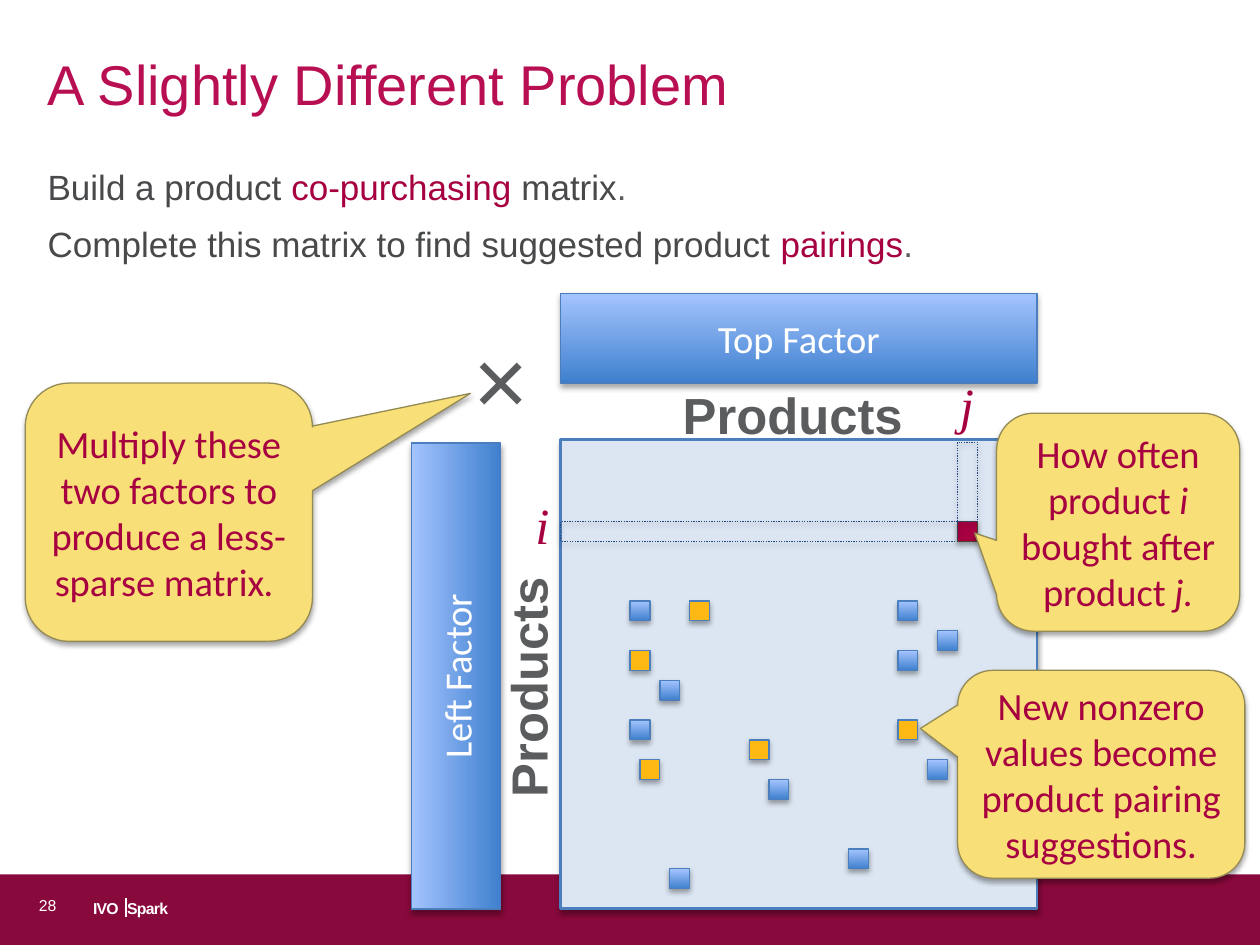
from lxml import etree
from pptx import Presentation
from pptx.dml.color import RGBColor
from pptx.enum.dml import MSO_LINE
from pptx.enum.shapes import MSO_CONNECTOR, MSO_SHAPE
from pptx.enum.text import MSO_ANCHOR, PP_ALIGN
from pptx.oxml import parse_xml
from pptx.oxml.ns import nsdecls, qn
from pptx.util import Inches, Pt

RECT = MSO_SHAPE.RECTANGLE
CALLOUT = MSO_SHAPE.ROUNDED_RECTANGULAR_CALLOUT
STRAIGHT = MSO_CONNECTOR.STRAIGHT
DOT = MSO_LINE.ROUND_DOT
MIDDLE = MSO_ANCHOR.MIDDLE
LEFT, CENTER = PP_ALIGN.LEFT, PP_ALIGN.CENTER

WIDTH, HEIGHT = 10, 7.5
MATRIX_X, MATRIX_Y, MATRIX_W, MATRIX_H = 4.45, 3.49, 3.78, 3.72
GRID_Y = 3.51
STEP = MATRIX_W / 48
CELL = 2 * STEP
FACTOR = 0.71

CRIMSON, GRAY, DARK, WHITE = "A70041", "5A5C5E", "48494B", "FFFFFF"
BLUE = ("3F80CE", "A4C4FF")
EDGE, AMBER, YELLOW = "4B7EBC", "FDB813", "F9DF77"
TARGET = (40, 8)
KNOWN = [(10, 24), (7, 16), (38, 19), (7, 28), (21, 34), (34, 16),
         (29, 41), (37, 32), (34, 21), (11, 43)]
FOUND = [(13, 16), (7, 21), (8, 32), (19, 30), (34, 28)]


def rgb(value):
    return RGBColor.from_string(value)


def box(*lengths):
    return [Inches(n) for n in lengths]


def style(font, size, color, name="Arial", bold=False, italic=False):
    font.size, font.name, font.bold, font.italic = Pt(size), name, bold, italic
    font.color.rgb = rgb(color)


def add_shadow(sp):
    sp.shadow.inherit = False
    effects = sp._element.spPr.find(qn("a:effectLst"))
    effects.append(parse_xml(
        f'<a:outerShdw {nsdecls("a")} blurRad="{Pt(3.1)}" dist="{Pt(1.8)}" '
        'dir="5400000" rotWithShape="0"><a:srgbClr val="000000">'
        '<a:alpha val="35000"/></a:srgbClr></a:outerShdw>'))


def add_block(s, at, fill, line=EDGE, width=0.75, kind=RECT):
    sp = s.shapes.add_shape(kind, *box(*at))
    add_shadow(sp)
    if fill is None:
        sp.fill.background()
    elif isinstance(fill, tuple):
        sp.fill.gradient()
        sp.fill.gradient_angle = 90
        for stop, color in zip(sp.fill.gradient_stops, fill):
            stop.color.rgb = rgb(color)
    else:
        sp.fill.solid()
        sp.fill.fore_color.rgb = rgb(fill)
    sp.line.color.rgb = rgb(line)
    sp.line.width = Pt(width)
    return sp


def add_cell(s, col, row, fill, line=EDGE):
    add_block(s, (MATRIX_X + col * STEP, GRID_Y + row * STEP, CELL, CELL), fill, line)


def add_guide(s, at):
    add_block(s, at, None, "1F497D").line.dash_style = DOT


def add_factor(s, at, text, rotation=0):
    sp = add_block(s, at, BLUE)
    sp.rotation = rotation
    tf = sp.text_frame
    tf.vertical_anchor = MIDDLE
    tf.text = text
    p = tf.paragraphs[0]
    p.alignment = CENTER
    style(p.font, 22, WHITE, "Calibri")


def add_callout(s, at, adjustments, runs):
    sp = add_block(s, at, YELLOW, "948A54", kind=CALLOUT)
    for i, value in enumerate(adjustments):
        sp.adjustments[i] = value
    tf = sp.text_frame
    tf.word_wrap = True
    tf.vertical_anchor = MIDDLE
    p = tf.paragraphs[0]
    p.alignment = CENTER
    style(p.font, 22, CRIMSON, "Calibri")
    for text, italic in runs:
        r = p.add_run()
        r.text = text
        r.font.italic = italic


def add_label(s, at, text, size, color, name="Arial", wrap=True, rotation=0, **look):
    sp = s.shapes.add_textbox(*box(*at))
    sp.rotation = rotation
    tf = sp.text_frame
    tf.word_wrap = wrap
    tf.text = text
    p = tf.paragraphs[0]
    style(p.font, size, color, name, **look)
    return p


def add_footer(s):
    band = s.shapes.add_shape(RECT, *box(0, 6.94, WIDTH, HEIGHT - 6.94))
    band.shadow.inherit = False
    band.fill.solid()
    band.fill.fore_color.rgb = rgb("88093C")
    band.line.fill.background()
    divider = s.shapes.add_connector(STRAIGHT, *box(1, 7.13, 1, 7.28))
    divider.line.color.rgb = rgb(WHITE)
    divider.line.width = Pt(1.25)
    etree.SubElement(divider._element.spPr, qn("a:effectLst"))
    p = add_label(s, (0.64, 7.08, 0.86, 0.25), "IVO\tSpark", 9, WHITE, bold=True)
    tabs = parse_xml(f'<a:tabLst {nsdecls("a")}><a:tab pos="{Inches(0.27)}" algn="l"/></a:tabLst>')
    p._p.get_or_add_pPr().insert(0, tabs)
    for r in p.runs:
        r._r.get_or_add_rPr().set("spc", "-40")
    add_label(s, (0.21, 7.06, 0.6, 0.27), "28", 9, WHITE)


def add_title(s, text):
    sp = s.shapes.title
    sp.left, sp.top, sp.width, sp.height = box(0.28, 0.32, 9.37, 0.68)
    tf = sp.text_frame
    tf.vertical_anchor = MIDDLE
    tf.text = text
    p = tf.paragraphs[0]
    p.alignment = LEFT
    style(p.font, 32, "B80F53")


def add_body(s, lines):
    tf = s.shapes.add_textbox(*box(0.28, 1.23, 9.37, 0.94)).text_frame
    tf.word_wrap = True
    for i, runs in enumerate(lines):
        p = tf.add_paragraph() if i else tf.paragraphs[0]
        p.line_spacing = 1.1
        if i:
            p.space_before = Pt(6)
        style(p.font, 20, DARK)
        for text, color in runs:
            r = p.add_run()
            r.text = text
            r.font.color.rgb = rgb(color)


def add_matrix(s):
    col, row = TARGET
    add_block(s, (MATRIX_X, MATRIX_Y, MATRIX_W, MATRIX_H), "DCE6F2", width=1.5)
    for x, y, rotation in [(5.32, 3, 0), (3.21, 5.15, 270)]:
        add_label(s, (x, y, 1.96, 0.59), "Products", 29, GRAY,
                  wrap=False, rotation=rotation, bold=True)
    add_cell(s, col, row, CRIMSON, "4A452A")
    for text, x, y, width in [("i", 4.15, 3.87, 0.45), ("j", 7.52, 2.92, 0.39)]:
        add_label(s, (x, y, width, 0.59), text, 29, CRIMSON, "Times New Roman", italic=True)
    add_guide(s, (MATRIX_X + col * STEP, GRID_Y, CELL, row * STEP))
    add_guide(s, (MATRIX_X, GRID_Y + row * STEP, col * STEP, CELL))


def main():
    prs = Presentation()
    prs.slide_width, prs.slide_height = box(WIDTH, HEIGHT)
    s = prs.slides.add_slide(prs.slide_layouts[5])
    add_footer(s)
    add_matrix(s)
    add_callout(s, (7.91, 3.28, 1.93, 1.73), (-0.59, 0.05, 0.17),
                [("How often product ", False), ("i", True),
                 (" bought after product ", False), ("j.", True)])
    add_body(s, [
        [("Build a product ", DARK), ("co-purchasing ", CRIMSON), ("matrix", DARK), (".", GRAY)],
        [("Complete this matrix to find suggested product ", DARK),
         ("pairings", CRIMSON), (".", GRAY)]])
    add_title(s, "A Slightly Different Problem")
    for col, row in KNOWN:
        add_cell(s, col, row, BLUE)
    add_factor(s, (MATRIX_X, 2.33, MATRIX_W, FACTOR), "Top Factor")
    add_factor(s, (1.77, 5.01, 3.7, FACTOR), "Left Factor", 270)
    add_callout(s, (0.2, 3.04, 2.28, 2.05), (1.05, -0.46, 0.17),
                [("Multiply these two factors to produce a less-sparse matrix", False),
                 (". ", True)])
    add_label(s, (3.66, 2.5, 0.71, 1.01), "×", 54, GRAY)
    for col, row in FOUND:
        add_cell(s, col, row, AMBER)
    add_callout(s, (7.6, 5.32, 2.28, 1.65), (-0.63, -0.22, 0.17),
                [("New nonzero values become product pairing suggestions.", False)])
    prs.save("out.pptx")


if __name__ == "__main__":
    main()
